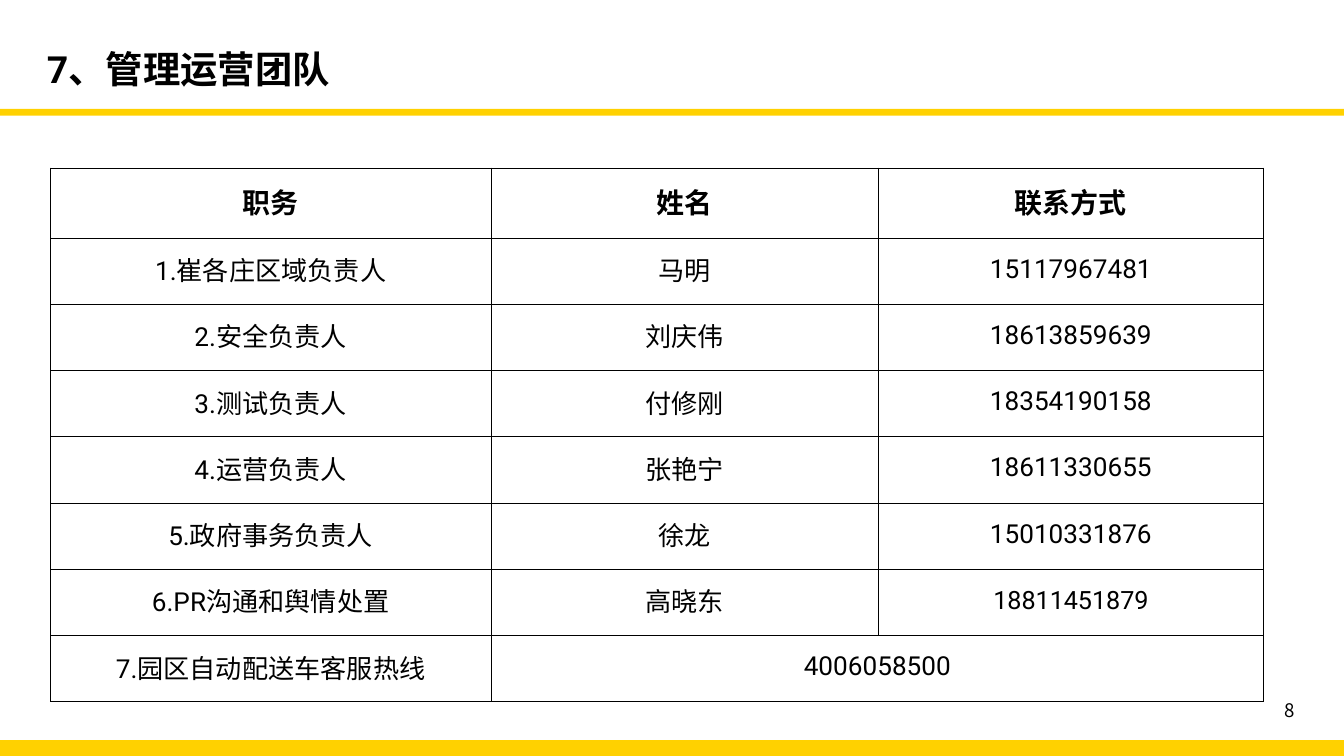
from lxml import etree
from pptx import Presentation
from pptx.dml.color import RGBColor
from pptx.enum import shapes, text
from pptx.oxml import ns
from pptx.util import Pt

COLORS = {"ink": "000000", "accent": "FFD100"}
SLIDE_WIDTH, SLIDE_HEIGHT = 720, 405
HEADINGS = ("职务", "姓名", "联系方式")
TEAM = (
    ("1.崔各庄区域负责人", "马明", "15117967481"),
    ("2.安全负责人", "刘庆伟", "18613859639"),
    ("3.测试负责人", "付修刚", "18354190158"),
    ("4.运营负责人", "张艳宁", "18611330655"),
    ("5.政府事务负责人", "徐龙", "15010331876"),
    ("6.PR沟通和舆情处置", "高晓东", "18811451879"),
)
HOTLINE = ("7.园区自动配送车客服热线", "4006058500")


def write(frame, content, size=14, bold=False, font="Roboto",
          align=text.PP_ALIGN.CENTER, spacing=None):
    paragraph = frame.paragraphs[0]
    paragraph.alignment = align
    paragraph.line_spacing = spacing
    run = paragraph.add_run()
    run.text = content
    run.font.size = Pt(size)
    run.font.bold = bold
    run.font.name = font
    run.font.color.rgb = RGBColor.from_string(COLORS["ink"])


def add_label(slide, box, content, wrap=True, **style):
    frame = slide.shapes.add_textbox(*map(Pt, box)).text_frame
    frame.word_wrap = wrap
    frame.vertical_anchor = text.MSO_ANCHOR.MIDDLE
    write(frame, content, spacing=0.9, **style)


def add_band(slide, box):
    band = slide.shapes.add_shape(shapes.MSO_SHAPE.RECTANGLE, *map(Pt, box))
    band.shadow.inherit = False
    band.fill.solid()
    band.fill.fore_color.rgb = RGBColor.from_string(COLORS["accent"])
    band.line.fill.background()


def add_header(slide, box):
    left, top, width, height = box
    rule = 3.6
    add_band(slide, (left, top + height - rule, width, rule))
    add_label(slide, (left + 18, top + 23.6, 492, 29), "7、管理运营团队",
              size=20, bold=True, align=text.PP_ALIGN.LEFT)


def add_footer(slide, box):
    left, top, width, height = box
    add_band(slide, box)
    add_label(slide, (left + width - 104.4, top - 25.2, 85, 20), "8", wrap=False,
              size=10, font="Noto Sans CJK SC", align=text.PP_ALIGN.RIGHT)


def add_borders(cell):
    properties = cell._tc.get_or_add_tcPr()
    for position, side in enumerate(("a:lnL", "a:lnR", "a:lnT", "a:lnB")):
        line = etree.Element(ns.qn(side), w=str(Pt(0.5)))
        fill = etree.SubElement(line, ns.qn("a:solidFill"))
        etree.SubElement(fill, ns.qn("a:srgbClr"), val=COLORS["ink"])
        properties.insert(position, line)


def add_team_table(slide, box):
    left, top, width, height = box
    rows = (HEADINGS, *TEAM, HOTLINE)
    heading_height = 37.6
    row_height = (height - heading_height) / (len(rows) - 1)
    table = slide.shapes.add_table(len(rows), len(HEADINGS), *map(Pt, box)).table
    table.first_row = table.horz_banding = False
    for column, share in zip(table.columns, (3.28, 2.88, 2.87)):
        column.width = Pt(width * share / 9.03)
    for index, row in enumerate(table.rows):
        row.height = Pt(row_height if index else heading_height)
    for cell in table.iter_cells():
        cell.fill.background()
        cell.vertical_anchor = text.MSO_ANCHOR.MIDDLE
        cell.margin_left = cell.margin_right = cell.margin_top = Pt(0.7)
        cell.margin_bottom = Pt(2.9)
        add_borders(cell)
    last = len(rows) - 1
    table.cell(last, 1).merge(table.cell(last, 2))
    for r, row in enumerate(rows):
        for c, content in enumerate(row):
            size = 15 if r == 0 else 13.5 if content == TEAM[-1][2] else 14
            write(table.cell(r, c).text_frame, content, size=size, bold=r == 0)


def main():
    deck = Presentation()
    deck.slide_width, deck.slide_height = Pt(SLIDE_WIDTH), Pt(SLIDE_HEIGHT)
    slide = deck.slides.add_slide(deck.slide_layouts[6])
    add_footer(slide, (0, SLIDE_HEIGHT - 8.4, SLIDE_WIDTH, 8.4))
    add_header(slide, (0, 0, SLIDE_WIDTH, 62))
    add_team_table(slide, (27, 90, 650, 286.2))
    deck.save("out.pptx")


if __name__ == "__main__":
    main()
